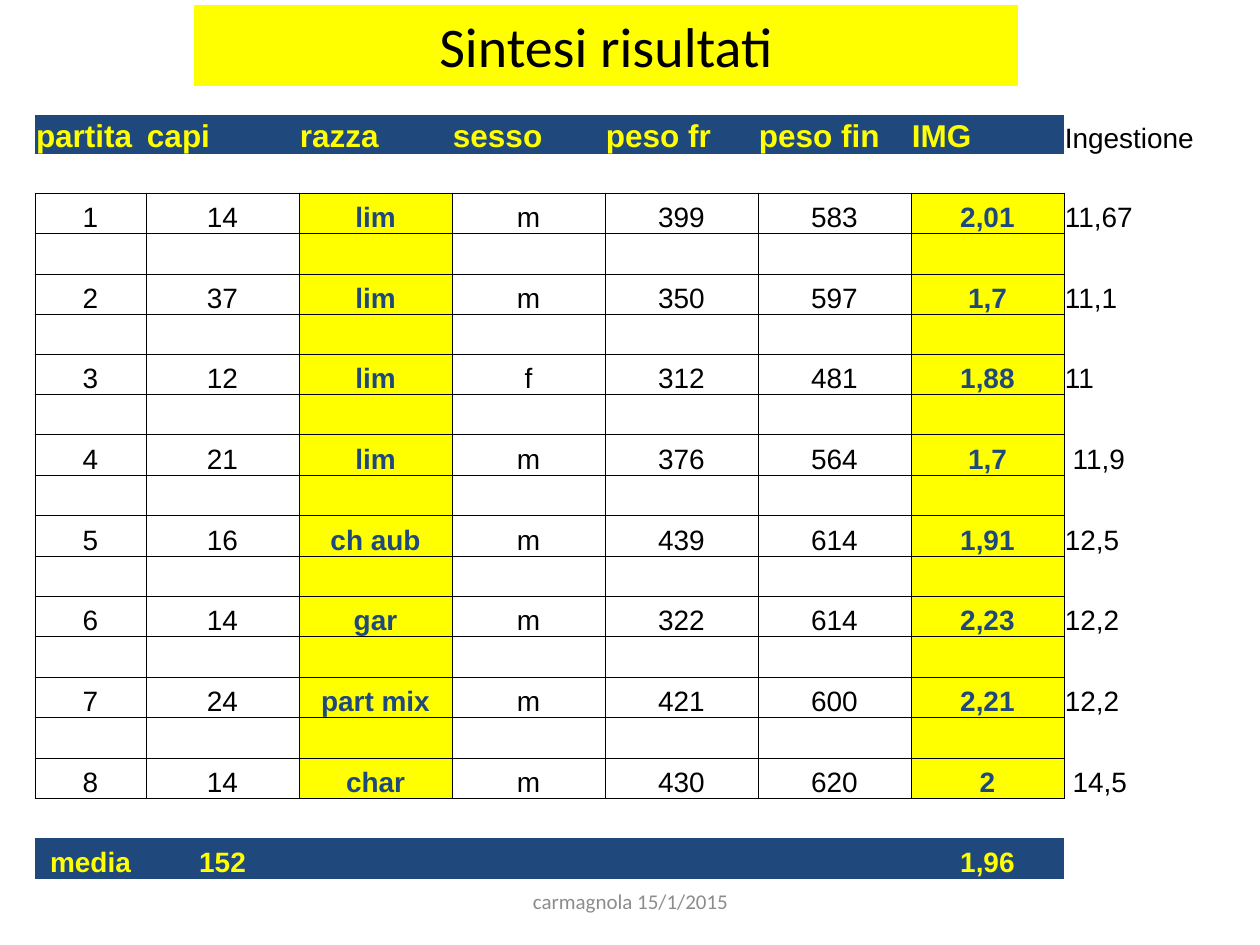
import pptx
import pptx.util
import pptx.dml.color
import pptx.enum.text
import pptx.oxml
import pptx.oxml.ns
import lxml.etree

PX = 914400 / 126
HUES = {"blue": "1F497D", "gold": "FFFF00", "ink": "000000", "grey": "8C8C8C"}
ALIGN = pptx.enum.text.PP_ALIGN
MID = pptx.enum.text.MSO_ANCHOR.MIDDLE
LOW = pptx.enum.text.MSO_ANCHOR.BOTTOM
qn = pptx.oxml.ns.qn


def px(num):
    return pptx.util.Emu(round(num * PX))


def style(para, size, face, hue, bold=False, align=ALIGN.CENTER):
    para.alignment = align
    for run in para.runs:
        run.font.size = pptx.util.Pt(size)
        run.font.name = face
        run.font.bold = bold
        run.font.color.rgb = pptx.dml.color.RGBColor.from_string(HUES[hue])


deck = pptx.Presentation()
deck.slide_width, deck.slide_height = px(1260), px(945)
slide = deck.slides.add_slide(deck.slide_layouts[5])

title = slide.shapes.title
title.left, title.top, title.width, title.height = px(194), px(5), px(824), px(81)
title.fill.solid()
title.fill.fore_color.rgb = pptx.dml.color.RGBColor.from_string(HUES["gold"])
title.text_frame.text = "Sintesi risultati"
title.text_frame.vertical_anchor = MID
style(title.text_frame.paragraphs[0], 32, "Calibri", "ink")

foot = slide.shapes.add_textbox(px(431), px(876), px(399), px(50))
foot.text_frame.word_wrap = True
foot.text_frame.vertical_anchor = MID
foot.text_frame.text = "carmagnola 15/1/2015"
style(foot.text_frame.paragraphs[0], 12, "Calibri", "grey")

heads = ["partita", "capi", "razza", "sesso", "peso fr", "peso fin", "IMG", "Ingestione"]
lots = [
    ["1", "14", "lim", "m", "399", "583", "2,01", "11,67"],
    ["2", "37", "lim", "m", "350", "597", "1,7", "11,1"],
    ["3", "12", "lim", "f", "312", "481", "1,88", "11"],
    ["4", "21", "lim", "m", "376", "564", "1,7", " 11,9"],
    ["5", "16", "ch aub", "m", "439", "614", "1,91", "12,5"],
    ["6", "14", "gar", "m", "322", "614", "2,23", "12,2"],
    ["7", "24", "part mix", "m", "421", "600", "2,21", "12,2"],
    ["8", "14", "char", "m", "430", "620", "2", " 14,5"],
]
means = ["media", "152", "", "", "", "", "1,96", ""]
blank = [""] * len(heads)
rows = [heads, blank]
for lot in lots:
    rows += [lot, blank]
rows.append(means)
last = len(rows) - 1

wide = [111] + [153] * 7
edges = [round(40.4 * step) for step in range(16)]
tall = [39, 39] + [low - top for top, low in zip(edges, edges[1:])] + [39, 41]

frame = slide.shapes.add_table(len(rows), len(heads), px(35), px(115), px(sum(wide)), px(sum(tall)))
table = frame.table
table.first_row = table.horz_banding = False
table._tbl.tblPr.find(qn("a:tableStyleId")).text = "{2D5ABB26-0587-4C30-8999-92F81FD0307C}"
for col, size in zip(table.columns, wide):
    col.width = px(size)
for row, size in zip(table.rows, tall):
    row.height = px(size)

for r, words in enumerate(rows):
    for c, word in enumerate(words):
        cell = table.cell(r, c)
        cell.margin_left = cell.margin_right = cell.margin_top = px(1)
        cell.margin_bottom = 0
        cell.vertical_anchor = LOW
        band = r in (0, last) and c < 7
        grid = 2 <= r <= last - 2 and c < 7
        mark = grid and c in (2, 6)

        if grid:
            for side in ("a:lnL", "a:lnR", "a:lnT", "a:lnB"):
                line = lxml.etree.SubElement(cell._tc.get_or_add_tcPr(), qn(side), w="6350")
                fill = lxml.etree.SubElement(line, qn("a:solidFill"))
                lxml.etree.SubElement(fill, qn("a:srgbClr"), val=HUES["ink"])
        if band or mark:
            cell.fill.solid()
            hue = HUES["blue" if band else "gold"]
            cell.fill.fore_color.rgb = pptx.dml.color.RGBColor.from_string(hue)
        else:
            cell.fill.background()

        para = cell.text_frame.paragraphs[0]
        if word:
            para.text = word
            size = 18 if band and r == 0 else 16
            tint = "gold" if band else "blue" if mark else "ink"
            align = ALIGN.LEFT if r == 0 or c == 7 else ALIGN.CENTER
            style(para, size, "Arial", tint, band or mark, align)
        else:
            lxml.etree.SubElement(para._p, qn("a:endParaRPr"), sz="1600")

deck.save("out.pptx")
